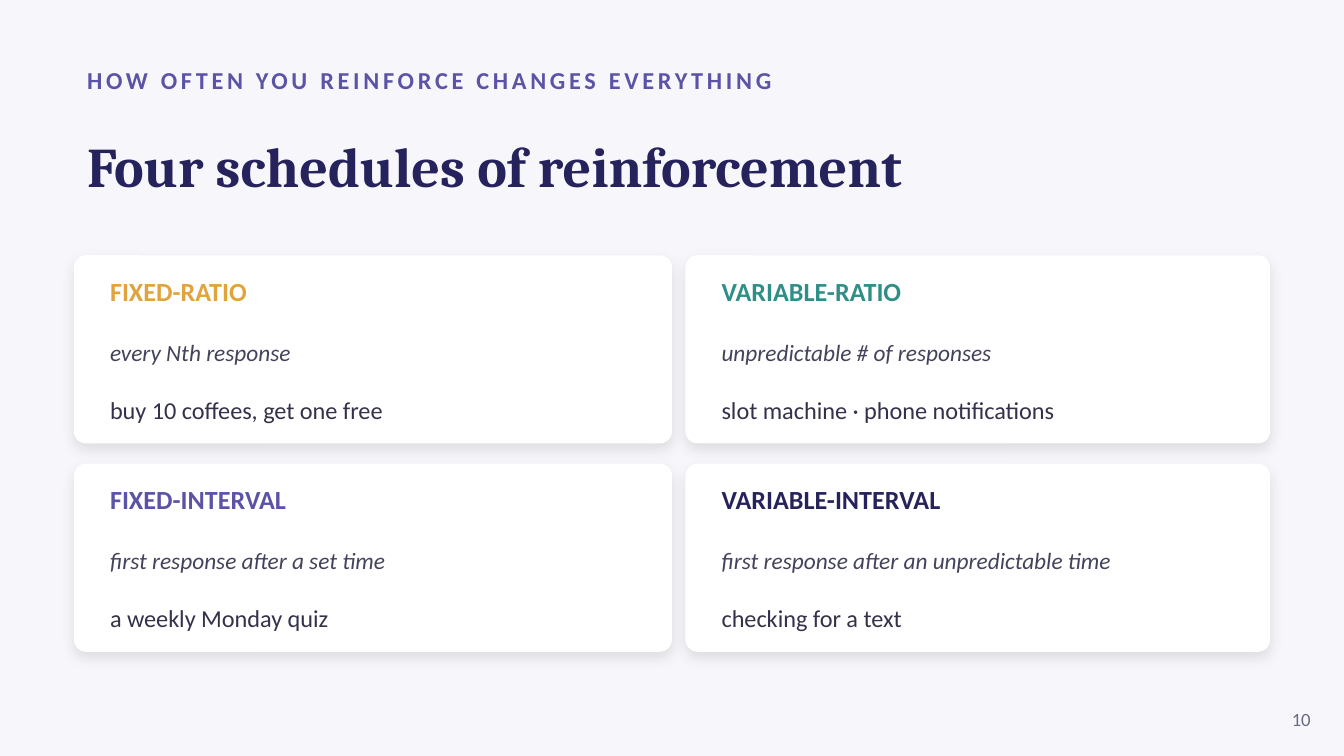
from dataclasses import dataclass

from lxml import etree
from pptx import Presentation
from pptx.dml.color import RGBColor
from pptx.enum.shapes import MSO_SHAPE
from pptx.enum.text import MSO_ANCHOR, PP_ALIGN
from pptx.oxml.ns import qn
from pptx.slide import Slide
from pptx.util import Inches, Pt

ROUND = MSO_SHAPE.ROUNDED_RECTANGLE
MIDDLE = MSO_ANCHOR.MIDDLE
LEFT, RIGHT = PP_ALIGN.LEFT, PP_ALIGN.RIGHT

PAPER = RGBColor(0xF7, 0xF7, 0xFB)
WHITE = RGBColor(0xFF, 0xFF, 0xFF)
PURPLE = RGBColor(0x5B, 0x53, 0xA6)
NAVY = RGBColor(0x26, 0x23, 0x5C)
GOLD = RGBColor(0xE0, 0xA3, 0x3E)
TEAL = RGBColor(0x2F, 0x8F, 0x86)
SLATE = RGBColor(0x44, 0x43, 0x5C)
INK = RGBColor(0x33, 0x32, 0x4A)
GREY = RGBColor(0x6B, 0x6A, 0x86)

WIDE = Inches(10)
HIGH = WIDE * 9 // 16
UNIT = WIDE // 100


@dataclass(frozen=True)
class Box:
    left: float
    top: float
    width: float
    height: float

    def place(self) -> tuple[int, ...]:
        sides = (self.left, self.top, self.width, self.height)
        return tuple(round(side * UNIT) for side in sides)

    def inset(self, side: float, top: float) -> "Box":
        return Box(self.left + side, self.top + top,
                   self.width - 2 * side, self.height - 2 * top)


@dataclass(frozen=True)
class Style:
    size: float
    color: RGBColor
    bold: bool = False
    slant: bool = False
    font: str = "Calibri"
    gap: float = 0
    track: int = 0


@dataclass(frozen=True)
class Card:
    row: int
    col: int
    name: str
    color: RGBColor
    rule: str
    case: str


COLS = ((5.5, 44.5), (51, 43.5))
TOP, STEP, TALL = 19, 15.5, 14

CARDS = (
    Card(0, 0, "FIXED-RATIO", GOLD, "every Nth response",
         "buy 10 coffees, get one free"),
    Card(0, 1, "VARIABLE-RATIO", TEAL, "unpredictable # of responses",
         "slot machine · phone notifications"),
    Card(1, 0, "FIXED-INTERVAL", PURPLE, "first response after a set time",
         "a weekly Monday quiz"),
    Card(1, 1, "VARIABLE-INTERVAL", NAVY,
         "first response after an unpredictable time", "checking for a text"),
)


def write(slide: Slide, box: Box, lines: list[tuple[str, Style]],
          align: PP_ALIGN = LEFT) -> None:
    frame = slide.shapes.add_textbox(*box.place()).text_frame
    frame.word_wrap = True
    frame.vertical_anchor = MIDDLE
    frame.text = "\n".join(text for text, _ in lines)
    for para, (_, style) in zip(frame.paragraphs, lines):
        para.alignment = align
        if style.gap:
            para.space_before = Pt(style.gap)
        run = para.runs[0]
        run.font.name = style.font
        run.font.size = Pt(style.size)
        run.font.bold = style.bold
        run.font.italic = style.slant
        run.font.color.rgb = style.color
        if style.track:
            run.font._element.set("spc", str(style.track * 100))


def panel(slide: Slide, box: Box) -> None:
    shape = slide.shapes.add_shape(ROUND, *box.place())
    shape.adjustments[0] = 0.9 / box.height
    shape.fill.solid()
    shape.fill.fore_color.rgb = WHITE
    shape.line.fill.background()
    shape.shadow.inherit = False
    effects = shape._element.spPr.find(qn("a:effectLst"))
    shade = etree.SubElement(effects, qn("a:outerShdw"), blurRad=str(Pt(7)),
                             dist=str(Pt(3)), dir="5400000", algn="bl",
                             rotWithShape="0")
    color = etree.SubElement(shade, qn("a:srgbClr"), val="000000")
    etree.SubElement(color, qn("a:alpha"), val="10000")


def frame_of(card: Card) -> Box:
    left, width = COLS[card.col]
    return Box(left, TOP + card.row * STEP, width, TALL)


def label(slide: Slide, card: Card) -> None:
    write(slide, frame_of(card).inset(1.7, 1.2), [
        (card.name, Style(14, card.color, bold=True)),
        (card.rule, Style(12.5, SLATE, slant=True, gap=17.1)),
        (card.case, Style(13, INK, gap=15.3)),
    ])


def main() -> None:
    deck = Presentation()
    deck.slide_width, deck.slide_height = WIDE, HIGH
    slide = deck.slides.add_slide(deck.slide_layouts[6])
    slide.background.fill.solid()
    slide.background.fill.fore_color.rgb = PAPER

    write(slide, Box(5.5, 4.2, 90, 3.5),
          [("HOW OFTEN YOU REINFORCE CHANGES EVERYTHING",
            Style(13, PURPLE, bold=True, track=2))])
    write(slide, Box(5.5, 7.8, 89, 9),
          [("Four schedules of reinforcement",
            Style(30, NAVY, bold=True, font="Cambria"))])
    for card in CARDS:
        panel(slide, frame_of(card))
    for card in CARDS:
        label(slide, card)
    write(slide, Box(93.5, 52, 5, 3), [("10", Style(10, GREY))], RIGHT)

    deck.save("out.pptx")


if __name__ == "__main__":
    main()
